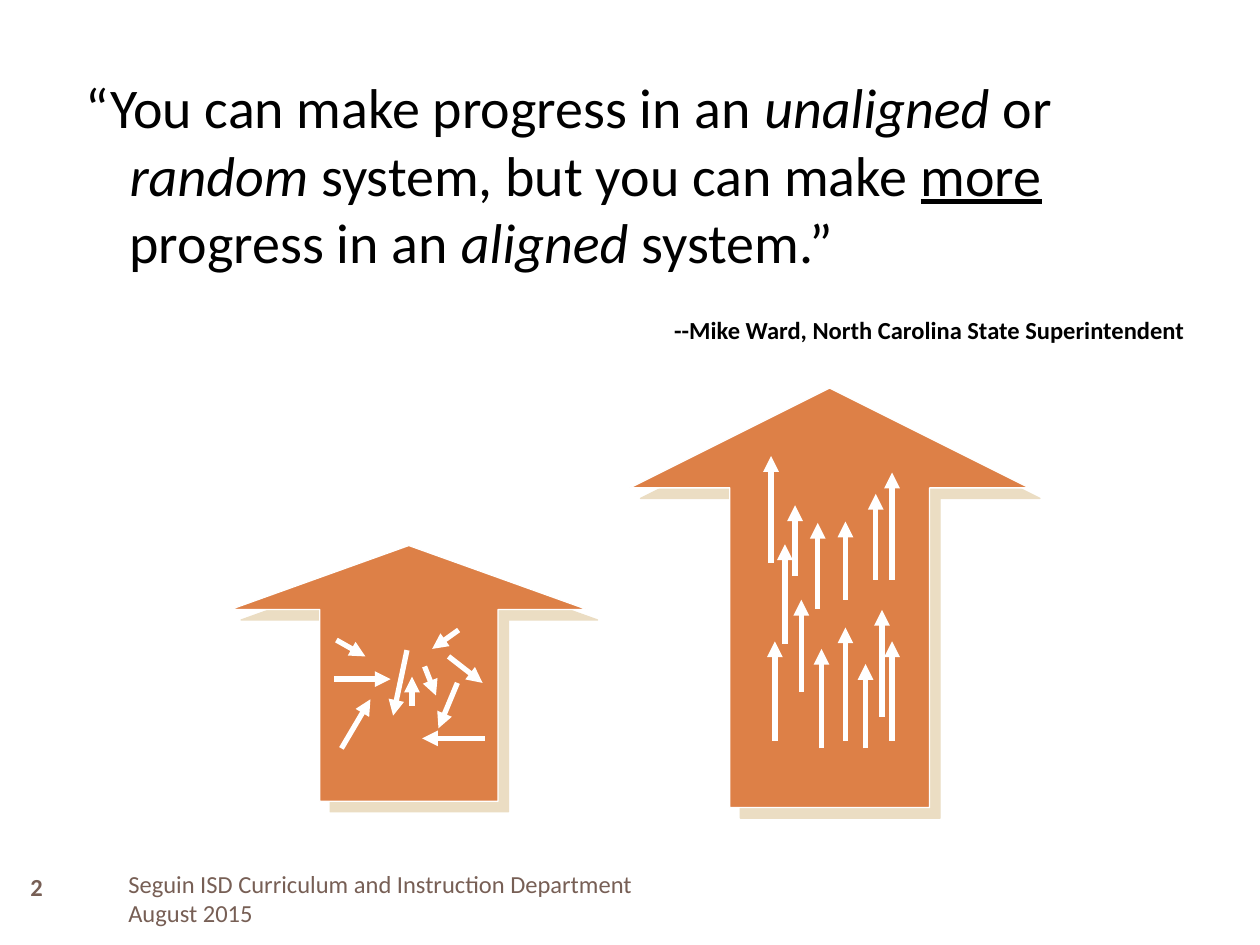
from typing import NamedTuple

from lxml.etree import SubElement
from pptx import Presentation
from pptx.dml.color import RGBColor
from pptx.enum.shapes import MSO_CONNECTOR, MSO_SHAPE
from pptx.enum.text import MSO_ANCHOR, PP_ALIGN
from pptx.oxml.ns import qn
from pptx.slide import Slide
from pptx.text.text import TextFrame
from pptx.util import Inches, Pt

BLACK = RGBColor(0x00, 0x00, 0x00)
WHITE = RGBColor(0xFF, 0xFF, 0xFF)
ORANGE = RGBColor(0xDD, 0x80, 0x47)
SAND = RGBColor(0xEB, 0xDD, 0xC3)
BROWN = RGBColor(0x77, 0x5F, 0x55)
FONT = "Calibri"


class Box(NamedTuple):
    left: float
    top: float
    width: float
    height: float


class Effort(NamedTuple):
    x1: float
    y1: float
    x2: float
    y2: float


class System(NamedTuple):
    """A block arrow and the small arrows that work inside it."""
    box: Box
    efforts: list[Effort]


class Phrase(NamedTuple):
    text: str
    italic: bool = False
    underline: bool = False


QUOTE = [
    Phrase("“You can make progress in an "),
    Phrase("unaligned", italic=True),
    Phrase(" or "),
    Phrase("random", italic=True),
    Phrase(" system, but you can make "),
    Phrase("more", underline=True),
    Phrase(" progress in an "),
    Phrase("aligned", italic=True),
    Phrase(" system.”"),
]

UNALIGNED = System(Box(1.83, 4.33, 2.83, 2.03), [
    Effort(2.65, 5.39, 3.10, 5.39),
    Effort(2.71, 5.94, 2.94, 5.55),
    Effort(2.67, 5.08, 2.90, 5.21),
    Effort(3.23, 5.16, 3.12, 5.68),
    Effort(3.64, 5.00, 3.43, 5.15),
    Effort(3.56, 5.21, 3.83, 5.42),
    Effort(3.27, 5.60, 3.27, 5.37),
    Effort(3.37, 5.29, 3.46, 5.52),
    Effort(3.63, 5.42, 3.48, 5.78),
    Effort(3.85, 5.86, 3.35, 5.86),
])

ALIGNED = System(Box(5, 3.08, 3.17, 3.33), [
    Effort(x, bottom, x, top) for x, bottom, top in [
        (6.23, 5.11, 4.32), (6.52, 5.94, 5.15), (6.15, 5.88, 5.09),
        (6.36, 5.49, 4.76), (6.49, 4.83, 4.15), (6.71, 5.88, 4.98),
        (6.71, 4.76, 4.14), (6.12, 4.47, 3.62), (6.31, 4.57, 4.01),
        (7.08, 4.60, 3.75), (7.08, 5.88, 5.09), (7.00, 5.69, 4.84),
        (6.87, 5.94, 5.27), (6.95, 4.60, 3.92),
    ]
])


def add_text_frame(slide: Slide, box: Box, anchor: MSO_ANCHOR) -> TextFrame:
    frame = slide.shapes.add_textbox(*map(Inches, box)).text_frame
    frame.word_wrap = True
    frame.vertical_anchor = anchor
    return frame


def set_font(paragraph, size: int, color: RGBColor, bold: bool = False) -> None:
    font = paragraph.font
    font.name, font.size, font.bold = FONT, Pt(size), bold
    font.color.rgb = color


def add_quote(slide: Slide) -> None:
    frame = add_text_frame(slide, Box(0.58, 0.53, 8.92, 2.4), MSO_ANCHOR.TOP)
    quote = frame.paragraphs[0]
    set_font(quote, 32, BLACK)
    properties = quote._p.get_or_add_pPr()
    properties.set("marL", str(Inches(0.35)))
    properties.set("indent", str(Inches(-0.35)))
    for phrase in QUOTE:
        run = quote.add_run()
        run.text = phrase.text
        if phrase.italic:
            run.font.italic = True
        if phrase.underline:
            run.font.underline = True

    author = frame.add_paragraph()
    author.text = "--Mike Ward, North Carolina State Superintendent"
    author.alignment = PP_ALIGN.RIGHT
    author.space_before = Pt(23)
    set_font(author, 14, BLACK, bold=True)


def add_hard_shadow(shape) -> None:
    """Give the shape an unblurred shadow down and to the right."""
    effects = shape._element.spPr.find(qn("a:effectLst"))
    shadow = SubElement(effects, qn("a:outerShdw"), dist=str(Pt(8.5)),
                        dir=str(45 * 60000), algn="ctr", rotWithShape="0")
    SubElement(shadow, qn("a:srgbClr"), val=str(SAND))


def add_effort(shapes, effort: Effort) -> None:
    connector = shapes.add_connector(MSO_CONNECTOR.STRAIGHT, *map(Inches, effort))
    connector.line.color.rgb = WHITE
    connector.line.width = Pt(3)
    SubElement(connector.line._get_or_add_ln(), qn("a:tailEnd"), type="triangle")
    SubElement(connector._element.spPr, qn("a:effectLst"))


def add_system(slide: Slide, system: System) -> None:
    shapes = slide.shapes.add_group_shape().shapes
    arrow = shapes.add_shape(MSO_SHAPE.UP_ARROW, *map(Inches, system.box))
    arrow.adjustments[0] = 0.5
    arrow.adjustments[1] = 0.25
    arrow.fill.solid()
    arrow.fill.fore_color.rgb = ORANGE
    arrow.line.color.rgb = WHITE
    arrow.line.width = Pt(0.75)
    arrow.shadow.inherit = False
    add_hard_shadow(arrow)
    for effort in system.efforts:
        add_effort(shapes, effort)


def add_footer(slide: Slide) -> None:
    number = add_text_frame(slide, Box(0, 6.83, 0.58, 0.42), MSO_ANCHOR.MIDDLE).paragraphs[0]
    number.text = "2"
    number.alignment = PP_ALIGN.CENTER
    set_font(number, 14, BROWN, bold=True)

    frame = add_text_frame(slide, Box(0.92, 6.83, 8.33, 0.6), MSO_ANCHOR.MIDDLE)
    frame.text = "Seguin ISD Curriculum and Instruction Department\nAugust 2015"
    for paragraph in frame.paragraphs:
        set_font(paragraph, 14, BROWN)


def main() -> None:
    presentation = Presentation()
    presentation.slide_width = Inches(10)
    presentation.slide_height = Inches(7.5)
    slide = presentation.slides.add_slide(presentation.slide_layouts[6])
    add_quote(slide)
    for system in (UNALIGNED, ALIGNED):
        add_system(slide, system)
    add_footer(slide)
    presentation.save("out.pptx")


if __name__ == "__main__":
    main()
